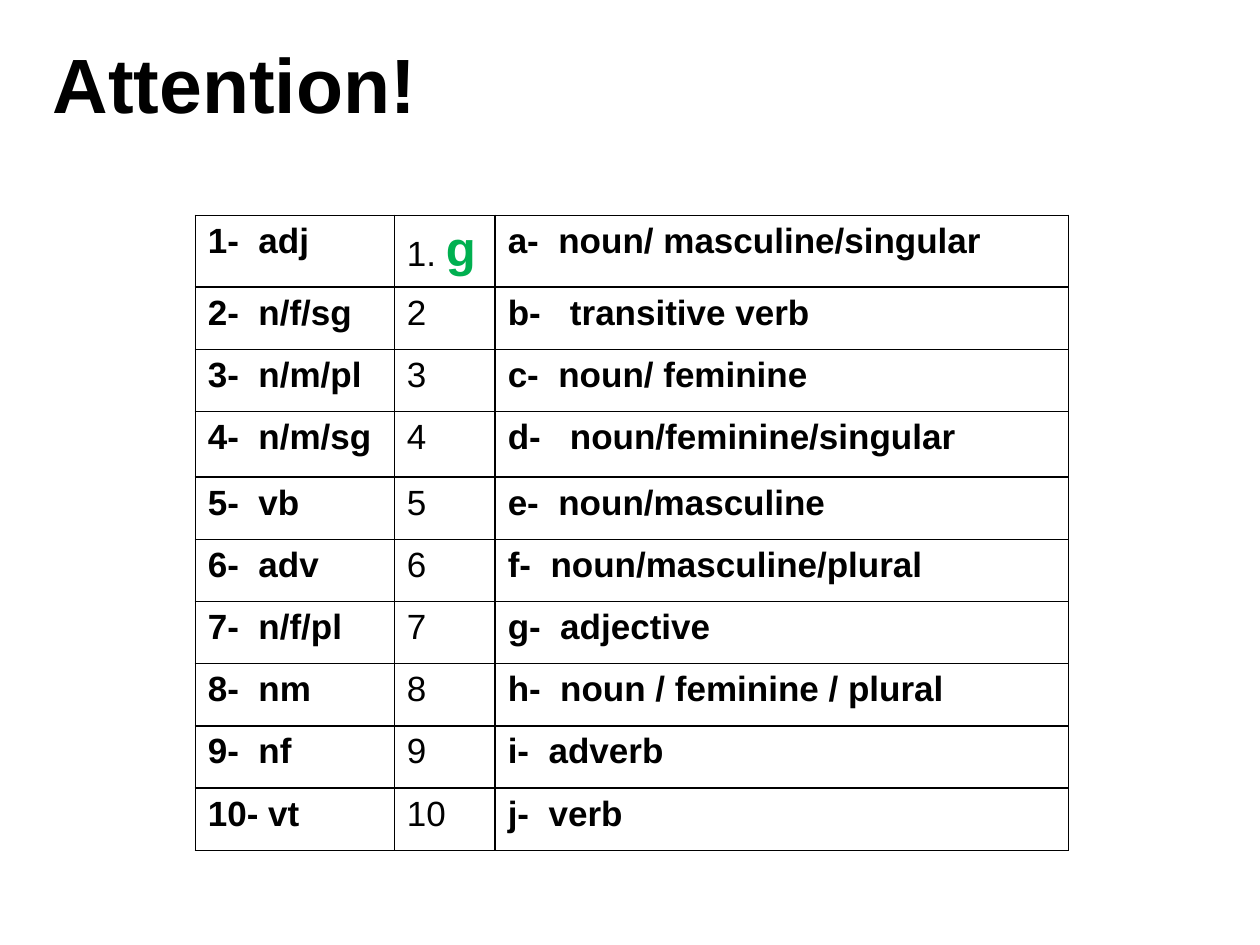
from typing import NamedTuple

from lxml import etree
from pptx import Presentation
from pptx.dml.color import RGBColor
from pptx.enum.text import MSO_AUTO_SIZE
from pptx.oxml.ns import qn
from pptx.util import Inches, Pt

AUTO_GROW = MSO_AUTO_SIZE.SHAPE_TO_FIT_TEXT
FONT = "Arial"
BLACK = "000000"
GREEN = "00B050"
HANGING_INDENT = Inches(0.38)

TABLE_HEIGHT = 5.04
COLUMN_WIDTHS = (1.58, 0.8, 4.55)
TALL_ROWS = {0: 0.57, 3: 0.52}


class Match(NamedTuple):
    abbreviation: str
    number: str
    meaning: str
    answer: str = ""


MATCHES = (
    Match("1-  adj", "1. ", "a-  noun/ masculine/singular", "g"),
    Match("2-  n/f/sg", "2", "b-   transitive verb"),
    Match("3-  n/m/pl", "3", "c-  noun/ feminine"),
    Match("4-  n/m/sg", "4", "d-   noun/feminine/singular"),
    Match("5-  vb", "5", "e-  noun/masculine"),
    Match("6-  adv", "6", "f-  noun/masculine/plural"),
    Match("7-  n/f/pl", "7", "g-  adjective"),
    Match("8-  nm", "8", "h-  noun / feminine / plural"),
    Match("9-  nf", "9", "i-  adverb"),
    Match("10- vt", "10", "j-  verb"),
)


def set_font(font, size: float, bold: bool, color: str = BLACK) -> None:
    font.name = FONT
    font.size = Pt(size)
    font.bold = bold
    font.color.rgb = RGBColor.from_string(color)


def add_borders(cell) -> None:
    properties = cell._tc.get_or_add_tcPr()
    for side in ("a:lnL", "a:lnR", "a:lnT", "a:lnB"):
        line = etree.SubElement(properties, qn(side), w=str(Pt(1)))
        fill = etree.SubElement(line, qn("a:solidFill"))
        etree.SubElement(fill, qn("a:srgbClr"), val=BLACK)


def write_cell(cell, text: str, bold: bool, answer: str = "") -> None:
    add_borders(cell)
    cell.fill.background()
    paragraph = cell.text_frame.paragraphs[0]
    properties = paragraph._p.get_or_add_pPr()
    properties.set("marL", str(HANGING_INDENT))
    properties.set("indent", str(-HANGING_INDENT))
    set_font(paragraph.font, 20, bold)
    paragraph.add_run().text = text
    if answer:
        run = paragraph.add_run()
        run.text = answer
        set_font(run.font, 28, True, GREEN)


def add_title(slide, text: str) -> None:
    box = slide.shapes.add_textbox(Inches(0.32), Inches(0.24), Inches(8.15), Inches(0.84))
    frame = box.text_frame
    frame.word_wrap = True
    frame.auto_size = AUTO_GROW
    frame.text = text
    set_font(frame.paragraphs[0].font, 44, True)


def add_match_table(slide, matches: tuple[Match, ...]) -> None:
    table = slide.shapes.add_table(
        len(matches), len(COLUMN_WIDTHS), Inches(1.55), Inches(1.71),
        Inches(sum(COLUMN_WIDTHS)), Inches(TABLE_HEIGHT),
    ).table
    table.first_row = False
    table.horz_banding = False
    for column, width in zip(table.columns, COLUMN_WIDTHS):
        column.width = Inches(width)

    plain_height = (TABLE_HEIGHT - sum(TALL_ROWS.values())) / (len(matches) - len(TALL_ROWS))
    for index, match in enumerate(matches):
        table.rows[index].height = Inches(TALL_ROWS.get(index, plain_height))
        write_cell(table.cell(index, 0), match.abbreviation, True)
        write_cell(table.cell(index, 1), match.number, False, match.answer)
        write_cell(table.cell(index, 2), match.meaning, True)


def main() -> None:
    presentation = Presentation()
    presentation.slide_width = Inches(10)
    presentation.slide_height = Inches(7.5)
    slide = presentation.slides.add_slide(presentation.slide_layouts[6])
    add_match_table(slide, MATCHES)
    add_title(slide, "Attention!")
    presentation.save("out.pptx")


if __name__ == "__main__":
    main()
